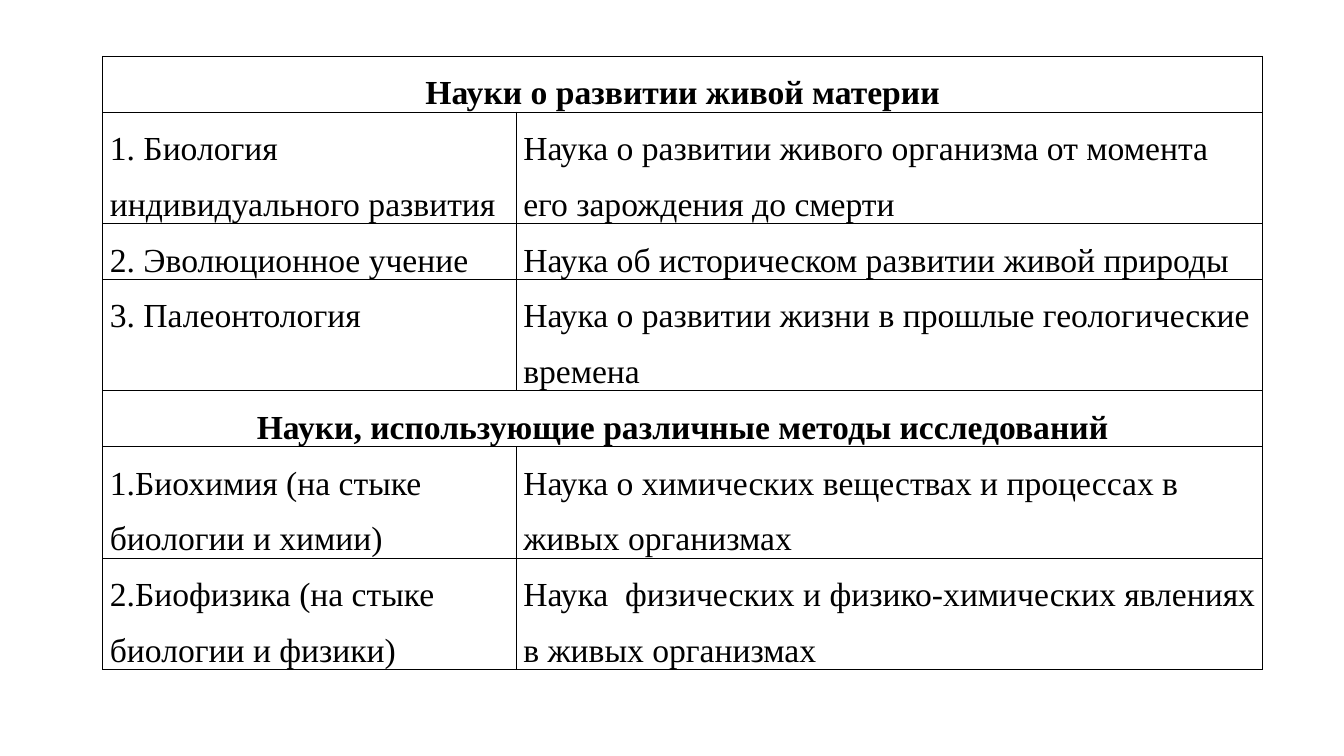
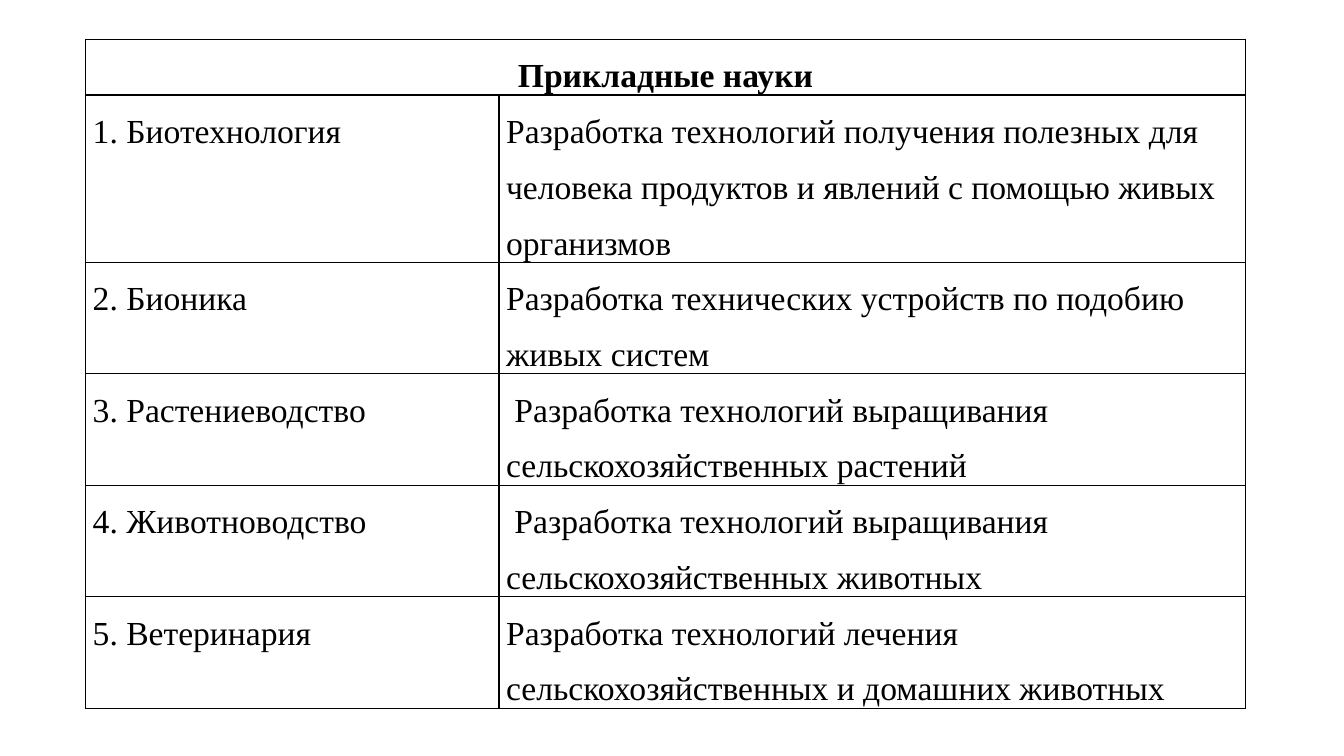
from lxml import etree
from pptx import Presentation
from pptx.dml.color import RGBColor
from pptx.enum.text import PP_ALIGN
from pptx.oxml.ns import qn
from pptx.util import Pt

LEFT, CENTER = PP_ALIGN.LEFT, PP_ALIGN.CENTER

# Content: (left, top) of each table, then rows as (line count, cell texts);
# a row with a single text is a heading across both columns
SLIDES = [
    ((102, 56), [
        (1, ["Науки о развитии живой материи"]),
        (2, ["1. Биология индивидуального развития",
             "Наука о развитии живого организма от момента его зарождения до смерти"]),
        (1, ["2. Эволюционное учение",
             "Наука об историческом развитии живой природы"]),
        (2, ["3. Палеонтология",
             "Наука о развитии жизни в прошлые геологические времена"]),
        (1, ["Науки, использующие различные методы исследований"]),
        (2, ["1.Биохимия (на стыке биологии и химии)",
             "Наука о химических веществах и процессах в живых организмах"]),
        (2, ["2.Биофизика (на стыке биологии и физики)",
             "Наука  физических и физико-химических явлениях в живых организмах"]),
    ]),
    ((85, 39), [
        (1, ["Прикладные науки"]),
        (3, ["1. Биотехнология",
             "Разработка технологий получения полезных для человека продуктов "
             "и явлений с помощью живых организмов"]),
        (2, ["2. Бионика",
             "Разработка технических устройств по подобию живых систем"]),
        (2, ["3. Растениеводство",
             " Разработка технологий выращивания сельскохозяйственных растений"]),
        (2, ["4. Животноводство",
             " Разработка технологий выращивания сельскохозяйственных животных"]),
        (2, ["5. Ветеринария",
             "Разработка технологий лечения сельскохозяйственных и домашних животных"]),
    ]),
]

# Shared style, lengths in px (100 px to the inch)
SLIDE_W, SLIDE_H = 1333, 750
COLUMNS = [410, 740]
LINE_H = 55
SIDE_MARGIN = 7
FONT, SIZE, SPACING = "Times New Roman", 24, 1.5
INK, PAPER = "000000", "FFFFFF"
BORDER_PT = 1


def px(n):
    return n * 9144


def color(value):
    return RGBColor.from_string(value)


def add_borders(cell):
    tc_pr = cell._tc.get_or_add_tcPr()
    for i, side in enumerate(("a:lnL", "a:lnR", "a:lnT", "a:lnB")):
        ln = etree.Element(qn(side), w=str(Pt(BORDER_PT)))
        fill = etree.SubElement(ln, qn("a:solidFill"))
        etree.SubElement(fill, qn("a:srgbClr"), val=INK)
        tc_pr.insert(i, ln)


def style_cell(cell):
    cell.margin_left = cell.margin_right = px(SIDE_MARGIN)
    cell.margin_top = cell.margin_bottom = 0
    cell.fill.background()
    add_borders(cell)


def write_cell(cell, text, heading):
    p = cell.text_frame.paragraphs[0]
    p.alignment = CENTER if heading else LEFT
    p.line_spacing = SPACING
    r = p.add_run()
    r.text = text
    r.font.name = FONT
    r.font.size = Pt(SIZE)
    r.font.bold = heading
    r.font.color.rgb = color(INK)


def add_science_table(slide, left, top, rows):
    height = sum(lines for lines, _ in rows) * LINE_H
    table = slide.shapes.add_table(len(rows), len(COLUMNS), px(left), px(top),
                                   px(sum(COLUMNS)), px(height)).table
    table.first_row = table.horz_banding = False
    for column, width in zip(table.columns, COLUMNS):
        column.width = px(width)
    for i, (lines, texts) in enumerate(rows):
        table.rows[i].height = px(lines * LINE_H)
        heading = len(texts) == 1
        for cell in table.rows[i].cells:
            style_cell(cell)
        if heading:
            table.cell(i, 0).merge(table.cell(i, len(COLUMNS) - 1))
        for j, text in enumerate(texts):
            write_cell(table.cell(i, j), text, heading)


def main():
    prs = Presentation()
    prs.slide_width, prs.slide_height = px(SLIDE_W), px(SLIDE_H)
    for (left, top), rows in SLIDES:
        slide = prs.slides.add_slide(prs.slide_layouts[6])
        slide.background.fill.solid()
        slide.background.fill.fore_color.rgb = color(PAPER)
        add_science_table(slide, left, top, rows)
    prs.save("out.pptx")


if __name__ == "__main__":
    main()
